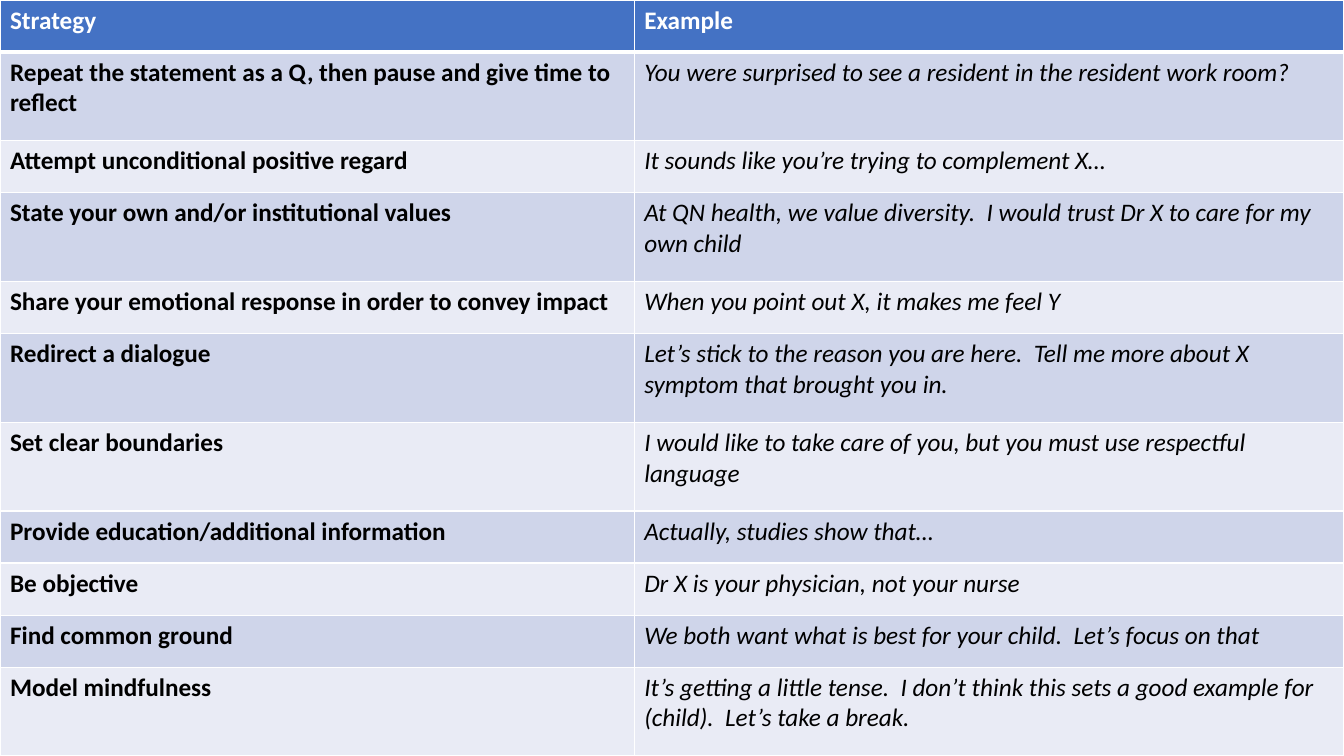
from lxml import etree
from pptx import Presentation
from pptx.dml.color import RGBColor
from pptx.oxml.ns import qn
from pptx.util import Inches, Pt

WHITE = RGBColor(0xFF, 0xFF, 0xFF)
BLACK = RGBColor(0x00, 0x00, 0x00)
HEADER_BLUE = RGBColor(0x44, 0x72, 0xC4)
BAND_DARK = RGBColor(0xCF, 0xD5, 0xEA)
BAND_LIGHT = RGBColor(0xE9, 0xEB, 0xF5)

SLIDE_WIDTH, SLIDE_HEIGHT = 13.33, 7.5
STRATEGY_WIDTH = 6.29
TALL_ROWS = (1, 3, 5, 6, 10)
TALL_HEIGHT = 0.88

ROWS = [
    ("Strategy", "Example"),
    ("Repeat the statement as a Q, then pause and give time to reflect",
     "You were surprised to see a resident in the resident work room?"),
    ("Attempt unconditional positive regard",
     "It sounds like you’re trying to complement X…"),
    ("State your own and/or institutional values",
     "At QN health, we value diversity.  I would trust Dr X to care for my own child"),
    ("Share your emotional response in order to convey impact",
     "When you point out X, it makes me feel Y"),
    ("Redirect a dialogue",
     "Let’s stick to the reason you are here.  Tell me more about X symptom that brought you in."),
    ("Set clear boundaries",
     "I would like to take care of you, but you must use respectful language"),
    ("Provide education/additional information", "Actually, studies show that…"),
    ("Be objective", "Dr X is your physician, not your nurse"),
    ("Find common ground",
     "We both want what is best for your child.  Let’s focus on that"),
    ("Model mindfulness",
     "It’s getting a little tense.  I don’t think this sets a good example for (child).  "
     "Let’s take a break."),
]
short_height = (SLIDE_HEIGHT - TALL_HEIGHT * len(TALL_ROWS)) / (len(ROWS) - len(TALL_ROWS))


def add_border(cell, side, points):
    properties = cell._tc.get_or_add_tcPr()
    line = etree.SubElement(properties, qn(f"a:ln{side}"), w=str(Pt(points)))
    fill = etree.SubElement(line, qn("a:solidFill"))
    etree.SubElement(fill, qn("a:srgbClr"), val=str(WHITE))


presentation = Presentation()
presentation.slide_width = Inches(SLIDE_WIDTH)
presentation.slide_height = Inches(SLIDE_HEIGHT)
slide = presentation.slides.add_slide(presentation.slide_layouts[6])

table = slide.shapes.add_table(
    len(ROWS), 2, 0, 0, Inches(SLIDE_WIDTH), Inches(SLIDE_HEIGHT)
).table
table.columns[0].width = Inches(STRATEGY_WIDTH)
table.columns[1].width = Inches(SLIDE_WIDTH - STRATEGY_WIDTH)

for row_index, row_texts in enumerate(ROWS):
    is_header = row_index == 0
    table.rows[row_index].height = Inches(TALL_HEIGHT if row_index in TALL_ROWS else short_height)
    band_color = BAND_DARK if row_index % 2 else BAND_LIGHT
    for column_index, text in enumerate(row_texts):
        cell = table.cell(row_index, column_index)
        for side in "LRTB":
            header_edge = (row_index, side) in ((0, "B"), (1, "T"))
            add_border(cell, side, 3 if header_edge else 1)
        cell.fill.solid()
        cell.fill.fore_color.rgb = HEADER_BLUE if is_header else band_color
        cell.text = text
        font = cell.text_frame.paragraphs[0].runs[0].font
        is_example = column_index == 1 and not is_header
        font_format = {"name": "Calibri", "size": Pt(18),
                       "bold": not is_example, "italic": is_example}
        for attribute, value in font_format.items():
            setattr(font, attribute, value)
        font.color.rgb = WHITE if is_header else BLACK

presentation.save("out.pptx")
